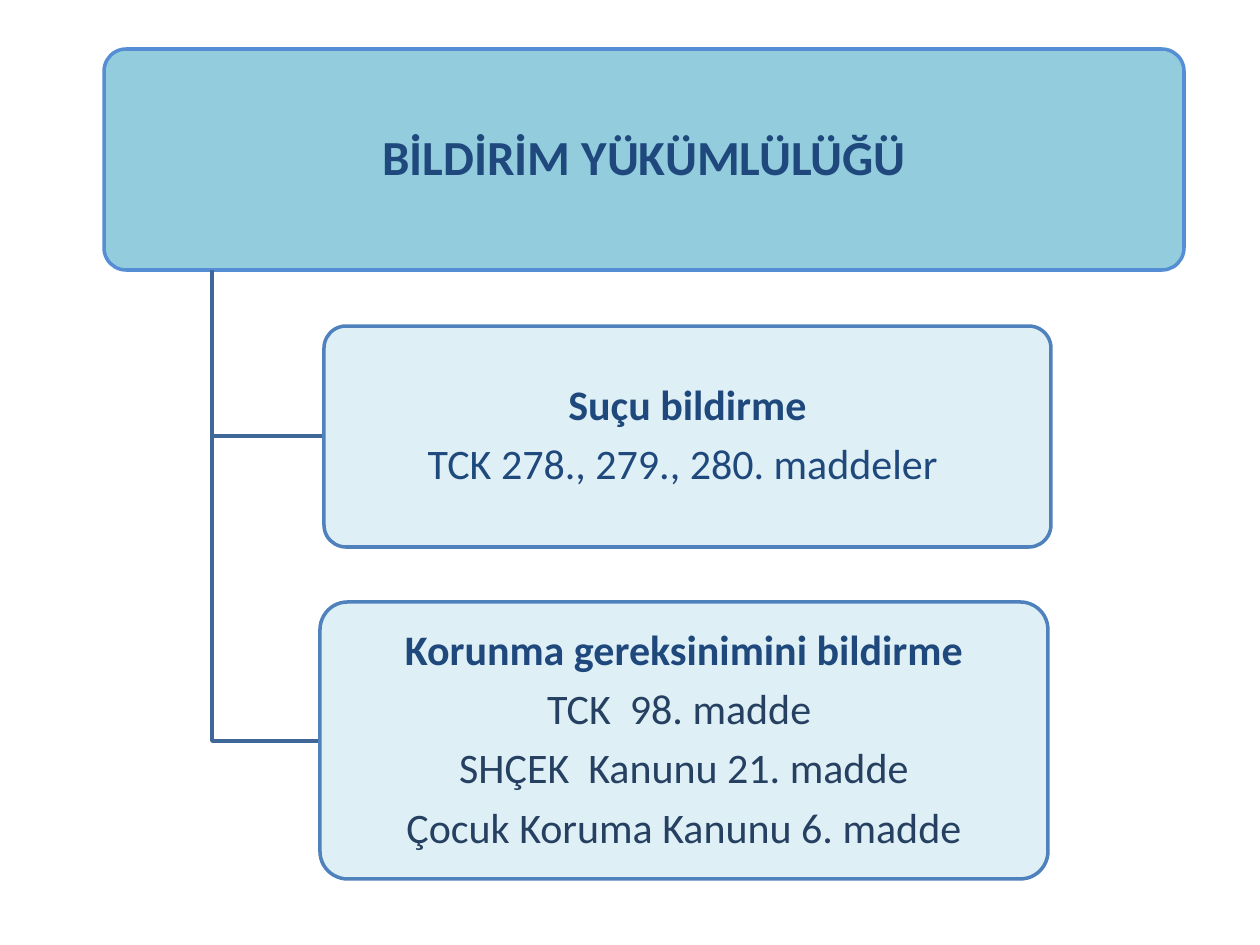
from lxml import etree
from pptx import Presentation, util as u
from pptx.dml.color import RGBColor
from pptx.enum import shapes, text
from pptx.oxml.ns import qn

SCALE = 914400 / 126
COLORS = {
    "title_fill": "93CDDD", "title_line": "558ED5",
    "duty_fill": "DBEEF4", "duty_line": "4F81BD",
    "branch": "3F6797", "heading": "1F497D", "law": "254061",
}
TITLE_BOX = (104, 49, 1080, 221)
TRUNK_X = 212
# Each duty: its box, the height where its branch arrives, its lines as (text, colour, bold)
DUTIES = [
    ((324, 326, 727, 221), 436, [
        ("Suçu bildirme", "heading", True),
        ("TCK 278., 279., 280. maddeler ", "heading", False)]),
    ((320, 602, 728, 277), 741, [
        ("Korunma gereksinimini bildirme", "heading", True),
        ("TCK  98. madde ", "law", False),
        ("SHÇEK  Kanunu 21. madde", "law", False),
        ("Çocuk Koruma Kanunu 6. madde", "law", False)]),
]


def px(length):
    return u.Emu(round(length * SCALE))


def color(name):
    return RGBColor.from_string(COLORS[name])


def set_all(target, values):
    for name, value in values.items():
        setattr(target, name, value)


def set_outline(shape, name):
    shape.shadow.inherit = False
    shape.line.color.rgb = color(name)
    shape.line.width = u.Pt(2)


def set_opacity(shape, percent):
    tint = shape.fill._xPr.find(qn("a:solidFill"))[0]
    etree.SubElement(tint, qn("a:alpha"), val=str(percent * 1000))


def add_box(page, box, kind, lines, size, opacity=100):
    """Draw a rounded box filled with centred lines of text."""
    shape = page.shapes.add_shape(shapes.MSO_SHAPE.ROUNDED_RECTANGLE, *map(px, box))
    shape.adjustments[0] = 0.1
    shape.fill.solid()
    shape.fill.fore_color.rgb = color(kind + "_fill")
    if opacity < 100:
        set_opacity(shape, opacity)
    set_outline(shape, kind + "_line")

    frame = shape.text_frame
    set_all(frame, {
        "word_wrap": True, "vertical_anchor": text.MSO_ANCHOR.MIDDLE,
        "margin_left": px(6), "margin_right": px(6),
        "margin_top": px(4), "margin_bottom": px(4),
    })
    for index, (words, tone, bold) in enumerate(lines):
        para = frame.add_paragraph() if index else frame.paragraphs[0]
        set_all(para, {"alignment": text.PP_ALIGN.CENTER, "line_spacing": 0.9,
                       "space_before": u.Pt(0), "space_after": u.Pt(size // 3)})
        span = para.add_run()
        span.text = words
        set_all(span.font, {"name": "Calibri", "size": u.Pt(size), "bold": bold})
        span.font.color.rgb = color(tone)


def add_branch(page, start, end):
    """Draw an open elbow: down from start, then across to end."""
    builder = page.shapes.build_freeform(*start, scale=SCALE)
    builder.add_line_segments([(start[0], end[1]), end], close=False)
    elbow = builder.convert_to_shape()
    elbow.fill.background()
    set_outline(elbow, "branch")


def add_hierarchy(page):
    trunk = (TRUNK_X, TITLE_BOX[1] + TITLE_BOX[3])
    add_box(page, TITLE_BOX, "title", [("BİLDİRİM YÜKÜMLÜLÜĞÜ", "heading", True)], 28)
    for box, arrival, lines in DUTIES:
        add_branch(page, trunk, (box[0], arrival))
        add_box(page, box, "duty", lines, 24, opacity=90)


def main():
    deck = Presentation()
    set_all(deck, {"slide_width": px(1260), "slide_height": px(945)})
    page = deck.slides.add_slide(deck.slide_layouts[6])
    add_hierarchy(page)
    deck.save("out.pptx")


if __name__ == "__main__":
    main()
